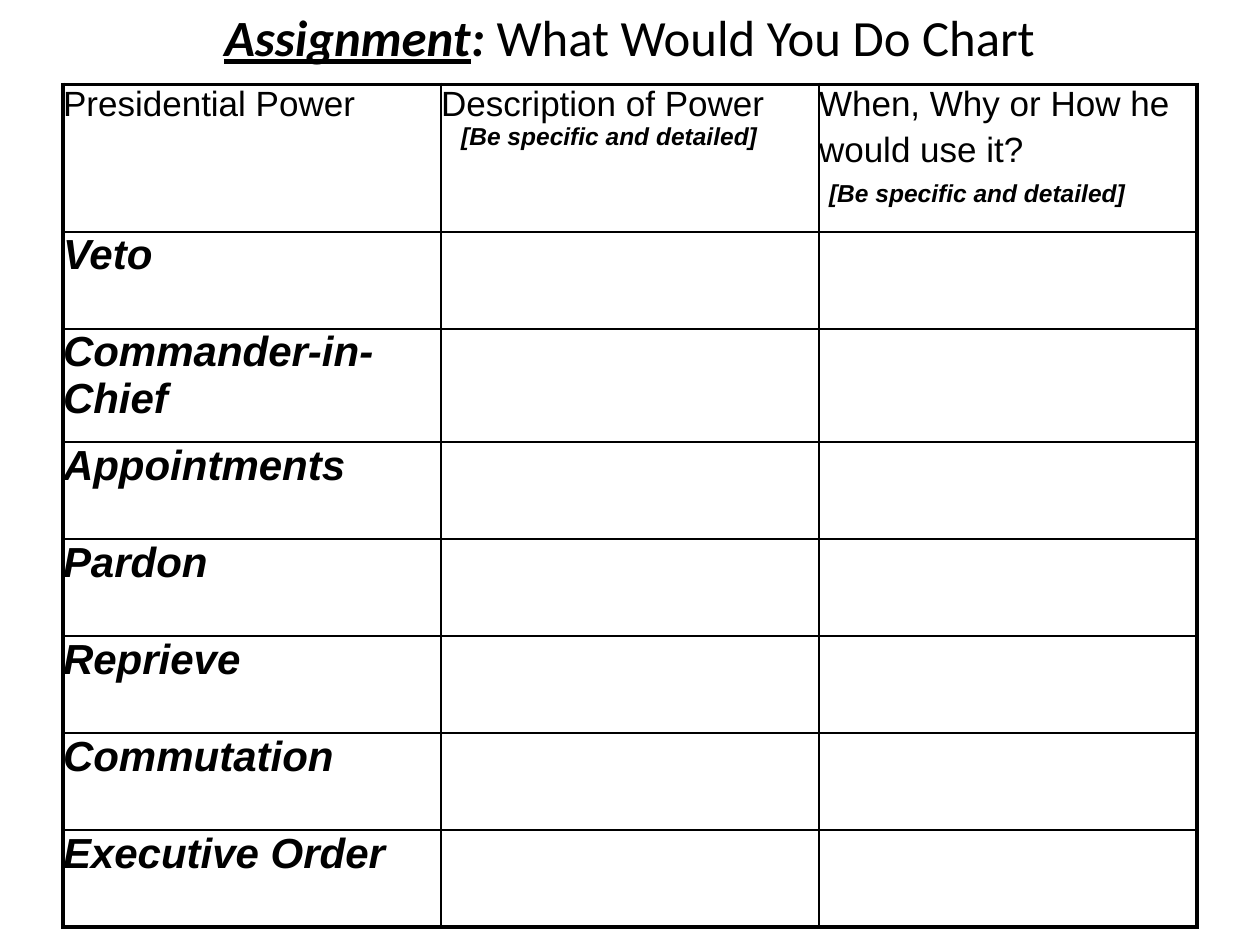
import pptx
import pptx.util
import pptx.dml.color
import pptx.enum.text
import pptx.oxml
import pptx.oxml.ns
from dataclasses import dataclass

INK = {"text": "000000", "line": "000000"}
WIDE, HIGH = 10, 7.5
THICK, THIN = 2.25, 1
NOTE = "[Be specific and detailed]"
POWERS = ["Veto", "Commander-in-Chief", "Appointments", "Pardon",
          "Reprieve", "Commutation", "Executive Order"]
ROWS = [1.17, 0.77, 0.9] + [0.77] * 5
COLS = 3


@dataclass
class Line:
    text: str
    size: float = 20
    strong: bool = False
    gap: float = 0
    indent: float = 0


HEADS = [
    [Line("Presidential Power")],
    [Line("Description of Power"), Line(NOTE, 14, True, indent=0.16)],
    [Line("When, Why or How he"), Line("would use it?", gap=4),
     Line(NOTE, 14, True, gap=6, indent=0.08)],
]


def write(para, text: str, *, size: float, font: str = "Arial",
          strong: bool = False, under: bool = False) -> None:
    run = para.add_run()
    run.text = text
    face = run.font
    face.name, face.size = font, pptx.util.Pt(size)
    face.bold = face.italic = strong
    face.underline = under
    face.color.rgb = pptx.dml.color.RGBColor.from_string(INK["text"])


def edge(cell, side: str, width: float) -> None:
    line = pptx.oxml.parse_xml(
        f'<a:ln{side} {pptx.oxml.ns.nsdecls("a")} w="{pptx.util.Pt(width)}">'
        f'<a:solidFill><a:srgbClr val="{INK["line"]}"/></a:solidFill>'
        f'</a:ln{side}>')
    cell._tc.get_or_add_tcPr().append(line)


def frame(cell, row: int, col: int) -> None:
    outer = {"L": col == 0, "R": col == COLS - 1,
             "T": row == 0, "B": row == len(ROWS) - 1}
    for side, thick in outer.items():
        edge(cell, side, THICK if thick else THIN)
    cell.fill.background()


def fill(cell, lines: list[Line]) -> None:
    cell.margin_left = cell.margin_right = 0
    cell.margin_top = cell.margin_bottom = 0
    for i, line in enumerate(lines):
        body = cell.text_frame
        para = body.add_paragraph() if i else body.paragraphs[0]
        para.space_before = pptx.util.Pt(line.gap)
        if line.indent:
            para._p.get_or_add_pPr().set(
                "marL", str(pptx.util.Inches(line.indent)))
        write(para, line.text, size=line.size, strong=line.strong)


def head(slide) -> None:
    title = slide.shapes.title
    title.left, title.top = pptx.util.Inches(WIDE * 0.05), 0
    title.width = pptx.util.Inches(WIDE * 0.9)
    title.height = pptx.util.Inches(0.58)
    body = title.text_frame
    body.auto_size = pptx.enum.text.MSO_AUTO_SIZE.NONE
    body.vertical_anchor = pptx.enum.text.MSO_ANCHOR.MIDDLE
    para = body.paragraphs[0]
    para.alignment = pptx.enum.text.PP_ALIGN.CENTER
    look = {"size": 29, "font": "Calibri"}
    write(para, "Assignment", strong=True, under=True, **look)
    write(para, ":", strong=True, **look)
    write(para, " What Would You Do Chart", **look)


def chart(slide) -> None:
    table = slide.shapes.add_table(
        len(ROWS), COLS, pptx.util.Inches(WIDE * 0.05),
        pptx.util.Inches(0.67), pptx.util.Inches(WIDE * 0.9),
        pptx.util.Inches(sum(ROWS))).table
    table.first_row = table.horz_banding = False
    grid = [HEADS] + [[[Line(power, 24, True)], [], []] for power in POWERS]
    for row, cells in enumerate(grid):
        table.rows[row].height = pptx.util.Inches(ROWS[row])
        for col, lines in enumerate(cells):
            cell = table.cell(row, col)
            fill(cell, lines)
            frame(cell, row, col)


def main() -> None:
    deck = pptx.Presentation()
    deck.slide_width = pptx.util.Inches(WIDE)
    deck.slide_height = pptx.util.Inches(HIGH)
    slide = deck.slides.add_slide(deck.slide_layouts[5])
    head(slide)
    chart(slide)
    deck.save("out.pptx")


if __name__ == "__main__":
    main()
